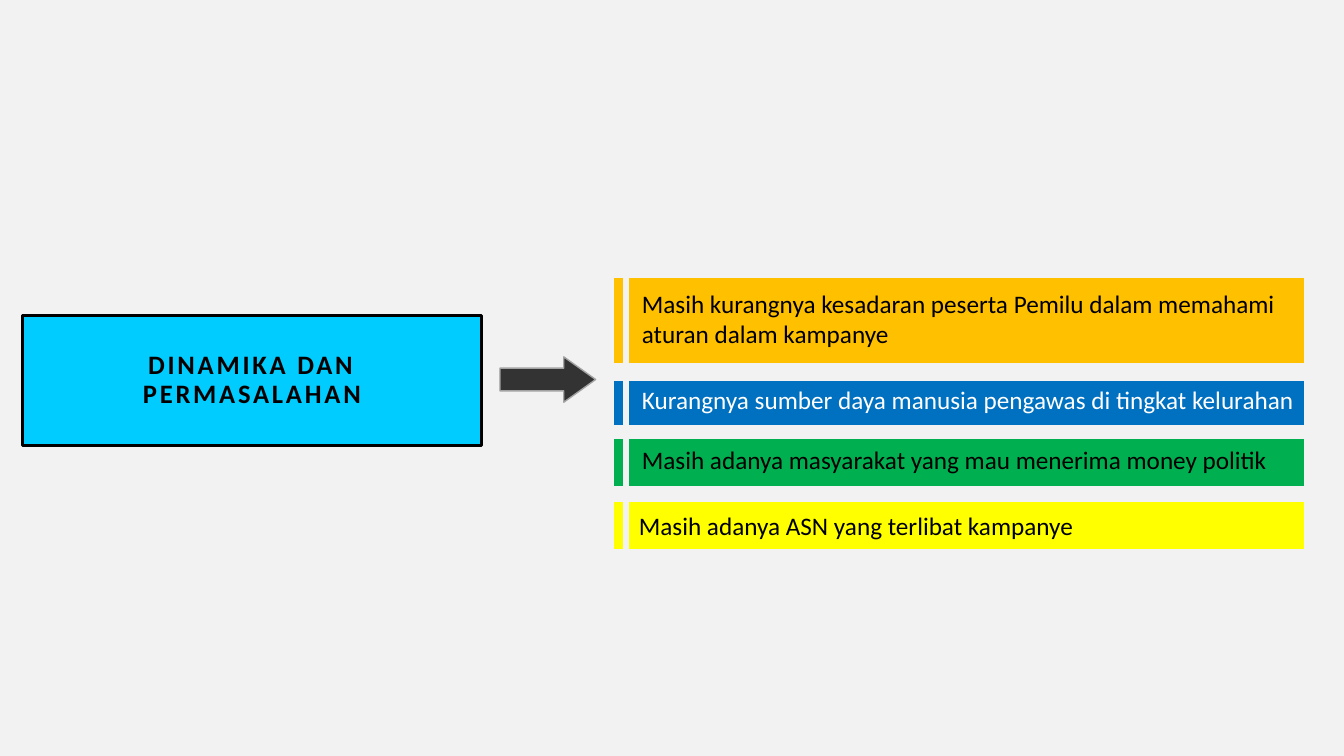
from copy import deepcopy

from pptx import Presentation
from pptx.dml.color import RGBColor
from pptx.enum.shapes import MSO_SHAPE as SHAPE
from pptx.enum.text import MSO_ANCHOR as ANCHOR, MSO_AUTO_SIZE as AUTO, PP_ALIGN as ALIGN
from pptx.oxml.ns import qn
from pptx.util import Inches, Pt

W, H = Inches(13.333), Inches(7.5)
COLORS = {
    "page": "F2F2F2", "black": "000000", "white": "FFFFFF", "cyan": "00CCFF",
    "dark": "333333", "grey": "A3A3A3", "amber": "FFC000", "blue": "0070C0",
    "green": "00B050", "yellow": "FFFF00",
}
TAB_X, TAB_W = 45.68, 0.68
BAR_X, BAR_W = 46.8, 50.25
TEXT_X, TEXT_W = 47.02, 50.1

# text, fill, text colour, bar top, bar height, text box (top, height) or None for text in the bar
ISSUES = [
    ("Masih kurangnya kesadaran peserta Pemilu dalam memahami aturan dalam kampanye",
     "amber", "black", 36.8, 11.2, (37.47, 9.47)),
    ("Kurangnya sumber daya manusia pengawas di tingkat kelurahan",
     "blue", "white", 50.4, 5.8, (50.13, 5.33)),
    ("Masih adanya masyarakat yang mau menerima money politik",
     "green", "black", 58.13, 6.2, (58.13, 5.33)),
    ("Masih adanya ASN yang terlibat kampanye",
     "yellow", "black", 66.4, 6.2, None),
]


def rgb(name):
    return RGBColor.from_string(COLORS[name])


def box(x, y, w, h):
    """Turn percentages of the slide's width and height into lengths."""
    return [int(W * x / 100), int(H * y / 100), int(W * w / 100), int(H * h / 100)]


def paint(sp, fill, line=None, width=1):
    sp.fill.solid()
    sp.fill.fore_color.rgb = rgb(fill)
    if line:
        sp.line.color.rgb = rgb(line)
        sp.line.width = Pt(width)
    else:
        sp.line.fill.background()


def add_shape(shapes, kind, at, fill, line=None):
    sp = shapes.add_shape(kind, *box(*at))
    sp.shadow.inherit = False
    paint(sp, fill, line)
    return sp


def write(tf, text, color, align=ALIGN.LEFT, **font):
    tf.word_wrap = True
    p = tf.paragraphs[0]
    p.text = text
    p.alignment = align
    for r in p.runs:
        for name, value in {"name": "Calibri", "size": Pt(18), **font}.items():
            setattr(r.font, name, value)
        r.font.color.rgb = rgb(color)
    return p


def add_title(s):
    sp = s.shapes.title
    sp.left, sp.top, sp.width, sp.height = box(1.65, 41.73, 34.2, 17.2)
    paint(sp, "cyan", "black", 2.25)
    tf = sp.text_frame
    frame = dict.fromkeys(
        ("margin_left", "margin_right", "margin_top", "margin_bottom"), Inches(0.2))
    frame.update(auto_size=AUTO.NONE, vertical_anchor=ANCHOR.MIDDLE)
    for name, value in frame.items():
        setattr(tf, name, value)
    p = write(tf, "DINAMIKA DAN\vPERMASALAHAN", "black", ALIGN.CENTER, size=Pt(19), bold=True)
    p.line_spacing = 0.9
    for r in p.runs:
        r.font._element.set("spc", "200")
    for br in p._p.findall(qn("a:br")):
        br.append(deepcopy(p.runs[0].font._element))


def add_arrow(s):
    sp = add_shape(s.shapes, SHAPE.RIGHT_ARROW, (37.2, 47.2, 7.12, 6), "dark", "grey")
    sp.adjustments[0], sp.adjustments[1] = 0.5, 0.702


def add_issue(s, text, fill, color, top, height, text_rows):
    group = s.shapes.add_group_shape()
    bar, _ = [add_shape(group.shapes, SHAPE.FLOWCHART_PROCESS, (x, top, w, height), fill)
              for x, w in ((BAR_X, BAR_W), (TAB_X, TAB_W))]
    if text_rows:
        text_top, text_height = text_rows
        sp = s.shapes.add_textbox(*box(TEXT_X, text_top, TEXT_W, text_height))
        sp.text_frame.auto_size = AUTO.SHAPE_TO_FIT_TEXT
    else:
        sp = bar
        sp.text_frame.vertical_anchor = ANCHOR.MIDDLE
    write(sp.text_frame, text, color)


def main():
    prs = Presentation()
    prs.slide_width, prs.slide_height = W, H
    s = prs.slides.add_slide(prs.slide_layouts[5])
    s.background.fill.solid()
    s.background.fill.fore_color.rgb = rgb("page")
    add_title(s)
    add_arrow(s)
    for issue in ISSUES:
        add_issue(s, *issue)
    prs.save("out.pptx")


if __name__ == "__main__":
    main()
